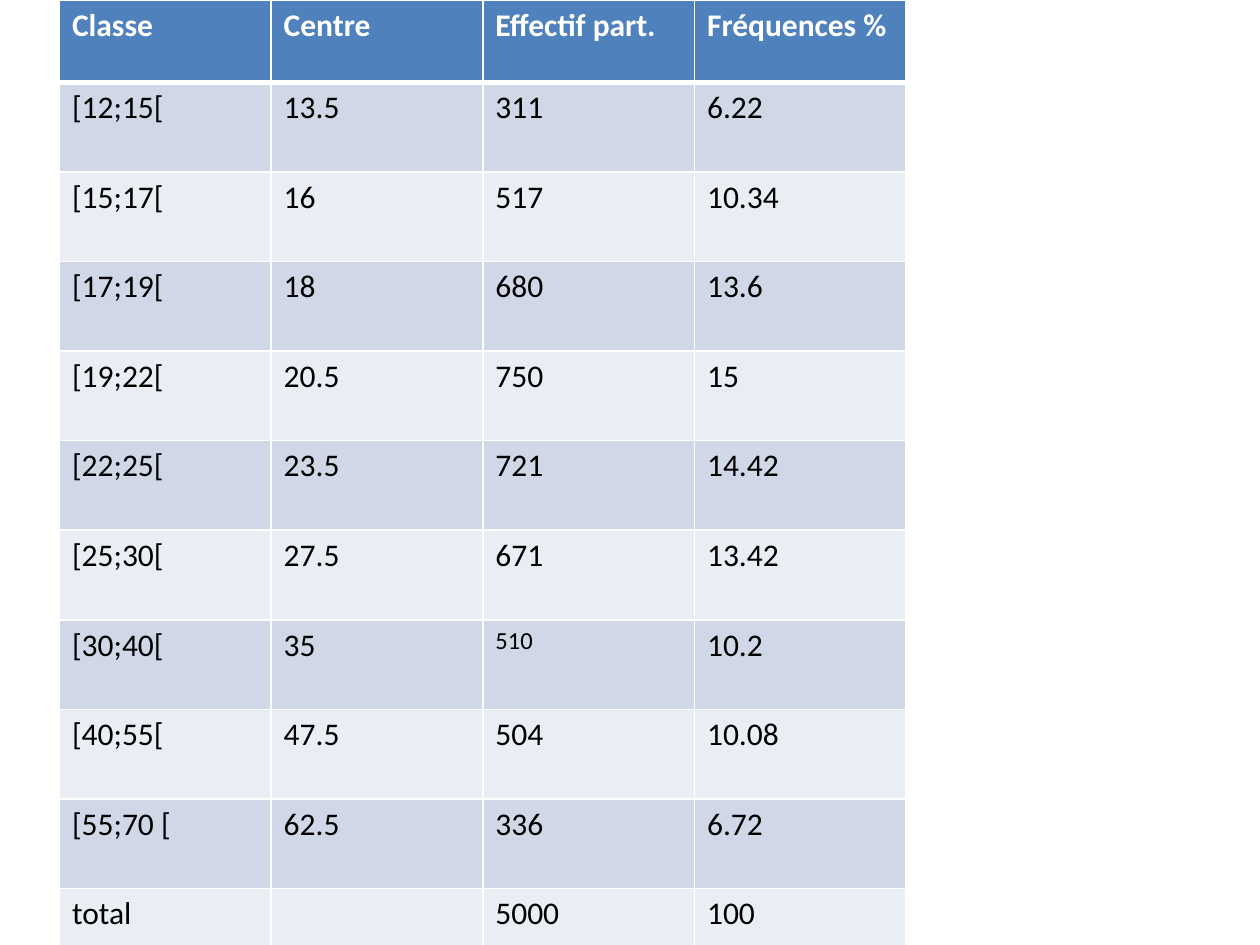
from lxml import etree
from pptx import Presentation
from pptx import util as u
from pptx.dml.color import RGBColor
from pptx.oxml import ns

HEADERS = ["Classe", "Centre", "Effectif part.", "Fréquences %"]
CLASSES = [
    ("[12;15[", "13.5", "311", "6.22"),
    ("[15;17[", "16", "517", "10.34"),
    ("[17;19[", "18", "680", "13.6"),
    ("[19;22[", "20.5", "750", "15"),
    ("[22;25[", "23.5", "721", "14.42"),
    ("[25;30[", "27.5", "671", "13.42"),
    ("[30;40[", "35", "510", "10.2"),
    ("[40;55[", "47.5", "504", "10.08"),
    ("[55;70 [", "62.5", "336", "6.72"),
]
TOTAL = ("total", "", "5000", "100")
SMALL_CELL = (7, 2)

THEME = {
    "font": "Calibri", "size": 18, "small": 14,
    "header": "4F81BD", "bands": ("E9EDF4", "D0D8E8"),
    "header_text": "FFFFFF", "text": "000000",
    "border": "FFFFFF", "line": 1, "header_line": 3,
}
LEFT, TOP, COLUMN_WIDTH = 34, 0, 120.96
HEADER_HEIGHT, CLASS_HEIGHT, TOTAL_HEIGHT = 47, 51.2, 40


def add_borders(cell, widths):
    properties = cell._tc.get_or_add_tcPr()
    for side, width in widths.items():
        line = etree.SubElement(properties, ns.qn(f"a:ln{side}"), w=str(u.Pt(width)))
        fill = etree.SubElement(line, ns.qn("a:solidFill"))
        etree.SubElement(fill, ns.qn("a:srgbClr"), val=THEME["border"])


def fill_cell(cell, words, row, column):
    header = row == 0
    thin, thick = THEME["line"], THEME["header_line"]
    add_borders(cell, {"L": thin, "R": thin,
                       "T": thick if row == 1 else thin,
                       "B": thick if header else thin})
    cell.fill.solid()
    colour = THEME["header"] if header else THEME["bands"][row % 2]
    cell.fill.fore_color.rgb = RGBColor.from_string(colour)
    if not words:
        return
    span = cell.text_frame.paragraphs[0].add_run()
    span.text = words
    size = THEME["small"] if (row, column) == SMALL_CELL else THEME["size"]
    for name, value in {"name": THEME["font"], "size": u.Pt(size), "bold": header}.items():
        setattr(span.font, name, value)
    ink = THEME["header_text"] if header else THEME["text"]
    span.font.color.rgb = RGBColor.from_string(ink)


def main():
    deck = Presentation()
    deck.slide_width, deck.slide_height = u.Pt(720), u.Pt(540)
    page = deck.slides.add_slide(deck.slide_layouts[6])
    rows = [HEADERS, *CLASSES, TOTAL]
    heights = [HEADER_HEIGHT, *[CLASS_HEIGHT] * len(CLASSES), TOTAL_HEIGHT]
    table = page.shapes.add_table(
        len(rows), len(HEADERS), u.Pt(LEFT), u.Pt(TOP),
        u.Pt(COLUMN_WIDTH * len(HEADERS)), u.Pt(sum(heights))).table
    for column in table.columns:
        column.width = u.Pt(COLUMN_WIDTH)
    for row, (values, height) in enumerate(zip(rows, heights)):
        table.rows[row].height = u.Pt(height)
        for column, words in enumerate(values):
            fill_cell(table.cell(row, column), words, row, column)
    deck.save("out.pptx")


if __name__ == "__main__":
    main()
